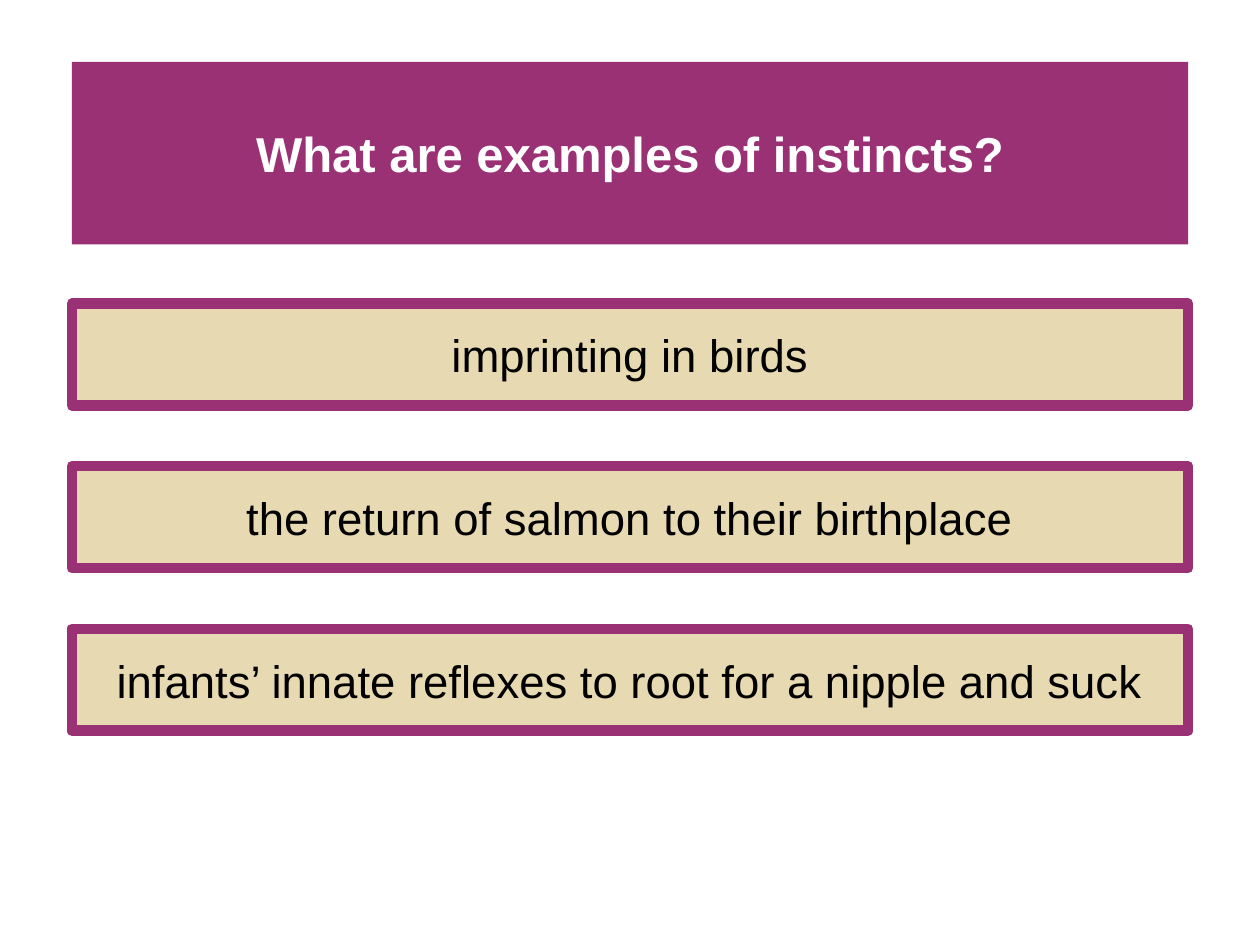
"""Build a slide listing examples of instincts under a title banner."""
from pptx import Presentation
from pptx.dml.color import RGBColor
from pptx.enum.shapes import MSO_SHAPE as SHAPE
from pptx.enum.text import MSO_ANCHOR as ANCHOR, PP_ALIGN as ALIGN
from pptx.util import Inches, Pt


def paint(color_format, color):
    color_format.rgb = RGBColor.from_string(color)


def add_box(s, top, height, text, fill, color, size, bold=False):
    sp = s.shapes.add_shape(SHAPE.RECTANGLE, MARGIN, top, W - 2 * MARGIN, height)
    sp.shadow.inherit = False
    sp.fill.solid()
    paint(sp.fill.fore_color, fill)
    sp.line.fill.background()
    tf = sp.text_frame
    tf.word_wrap = True
    tf.vertical_anchor = ANCHOR.MIDDLE
    p = tf.paragraphs[0]
    p.text = text
    p.alignment = ALIGN.CENTER
    p.font.name, p.font.size, p.font.bold = "Arial", Pt(size), bold
    paint(p.font.color, color)
    return sp


PLUM, SAND = "9B3175", "E7D9B1"
EXAMPLES = [
    "imprinting in birds",
    "the return of salmon to their birthplace",
    "infants’ innate reflexes to root for a nipple and suck",
]

prs = Presentation()
prs.slide_width, prs.slide_height = W, H = Inches(10), Inches(7.5)
MARGIN = Inches(0.57)
FIRST_TOP, ROW_STEP, ROW_HEIGHT = Inches(2.41), Inches(1.29), Inches(0.81)
s = prs.slides.add_slide(prs.slide_layouts[6])

add_box(s, Inches(0.49), Inches(1.45), "What are examples of instincts?",
        PLUM, "FFFFFF", 28, bold=True)

for row, example in enumerate(EXAMPLES):
    sp = add_box(s, FIRST_TOP + row * ROW_STEP, ROW_HEIGHT, example,
                 SAND, "000000", 26)
    paint(sp.line.color, PLUM)
    sp.line.width = Pt(6)

prs.save("out.pptx")
